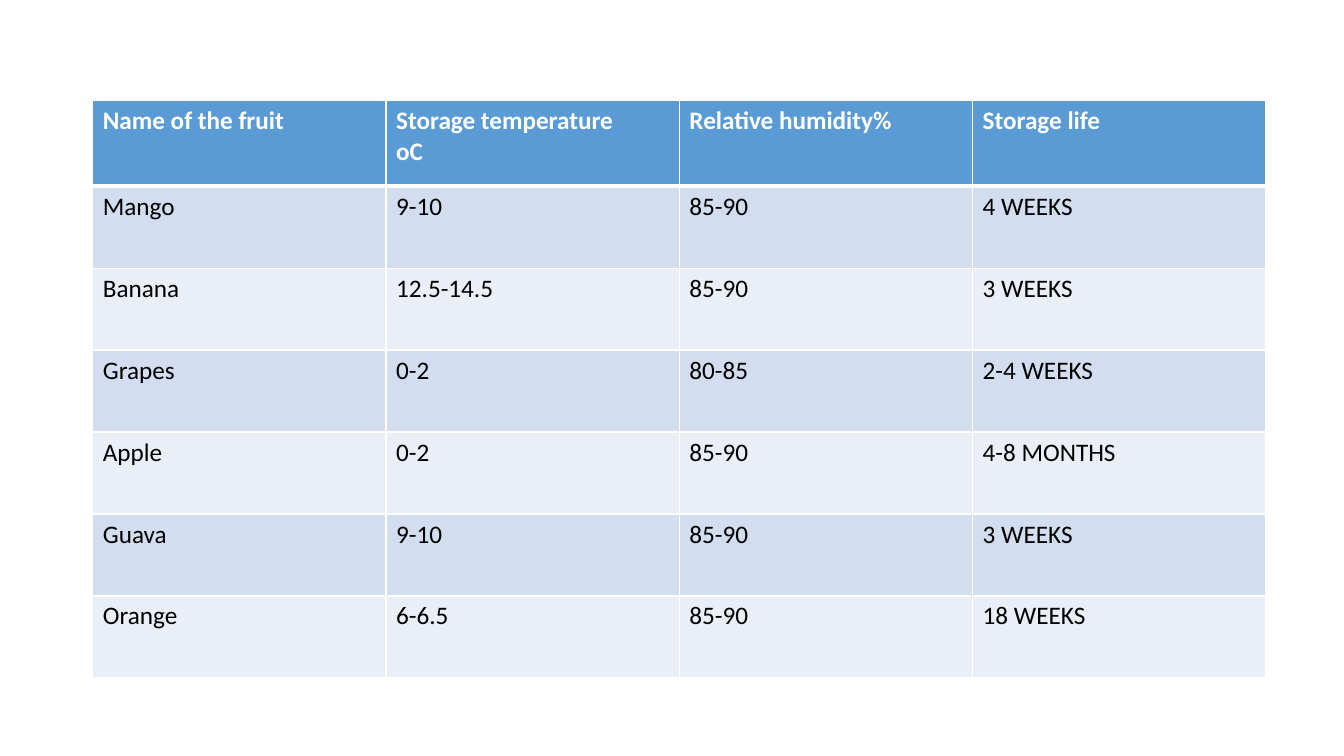
from dataclasses import dataclass

from lxml.etree import SubElement
from pptx import Presentation
from pptx.dml.color import RGBColor
from pptx.oxml.ns import qn
from pptx.util import Pt

HEADER = ["Name of the fruit", "Storage temperature\noC", "Relative humidity%", "Storage life"]
FRUITS = [
    ("Mango", "9-10", "85-90", "4 WEEKS"),
    ("Banana", "12.5-14.5", "85-90", "3 WEEKS"),
    ("Grapes", "0-2", "80-85", "2-4 WEEKS"),
    ("Apple", "0-2", "85-90", "4-8 MONTHS"),
    ("Guava", "9-10", "85-90", "3 WEEKS"),
    ("Orange", "6-6.5", "85-90", "18 WEEKS"),
]


@dataclass(frozen=True)
class Theme:
    font: str = "Calibri"
    size: int = 18
    header: str = "5B9BD5"
    bands: tuple = ("D2DEEF", "EAEFF7")
    light: str = "FFFFFF"
    dark: str = "000000"
    rule: int = 1
    header_rule: int = 3


THEME = Theme()
LEFT, TOP = 66.3, 72
COL_W, HEADER_H, ROW_H = 209.5, 61, 58.56


def write(tf, text, *, color, bold=False):
    tf.text = text
    for p in tf.paragraphs:
        for r in p.runs:
            r.font.name = THEME.font
            r.font.size = Pt(THEME.size)
            r.font.bold = bold
            r.font.color.rgb = RGBColor.from_string(color)


def set_borders(cell, top, bottom):
    """Draw the four cell edges; call before filling, as the schema puts lines first."""
    tc_pr = cell._tc.get_or_add_tcPr()
    widths = {"a:lnL": THEME.rule, "a:lnR": THEME.rule, "a:lnT": top, "a:lnB": bottom}
    for tag, width in widths.items():
        ln = SubElement(tc_pr, qn(tag), w=str(Pt(width)))
        fill = SubElement(ln, qn("a:solidFill"))
        SubElement(fill, qn("a:srgbClr"), val=THEME.light)


def add_storage_table(slide):
    rows = [HEADER, *FRUITS]
    height = HEADER_H + ROW_H * len(FRUITS)
    frame = slide.shapes.add_table(
        len(rows), len(HEADER), Pt(LEFT), Pt(TOP), Pt(COL_W * len(HEADER)), Pt(height)
    )
    table = frame.table
    for col in table.columns:
        col.width = Pt(COL_W)
    for i, values in enumerate(rows):
        is_header = i == 0
        table.rows[i].height = Pt(HEADER_H if is_header else ROW_H)
        fill = THEME.header if is_header else THEME.bands[(i - 1) % 2]
        top = THEME.header_rule if i == 1 else THEME.rule
        bottom = THEME.header_rule if is_header else THEME.rule
        for j, text in enumerate(values):
            cell = table.cell(i, j)
            set_borders(cell, top, bottom)
            cell.fill.solid()
            cell.fill.fore_color.rgb = RGBColor.from_string(fill)
            write(cell.text_frame, text, bold=is_header,
                  color=THEME.light if is_header else THEME.dark)


def main():
    prs = Presentation()
    prs.slide_width, prs.slide_height = Pt(960), Pt(540)
    slide = prs.slides.add_slide(prs.slide_layouts[6])
    add_storage_table(slide)
    prs.save("out.pptx")


if __name__ == "__main__":
    main()
